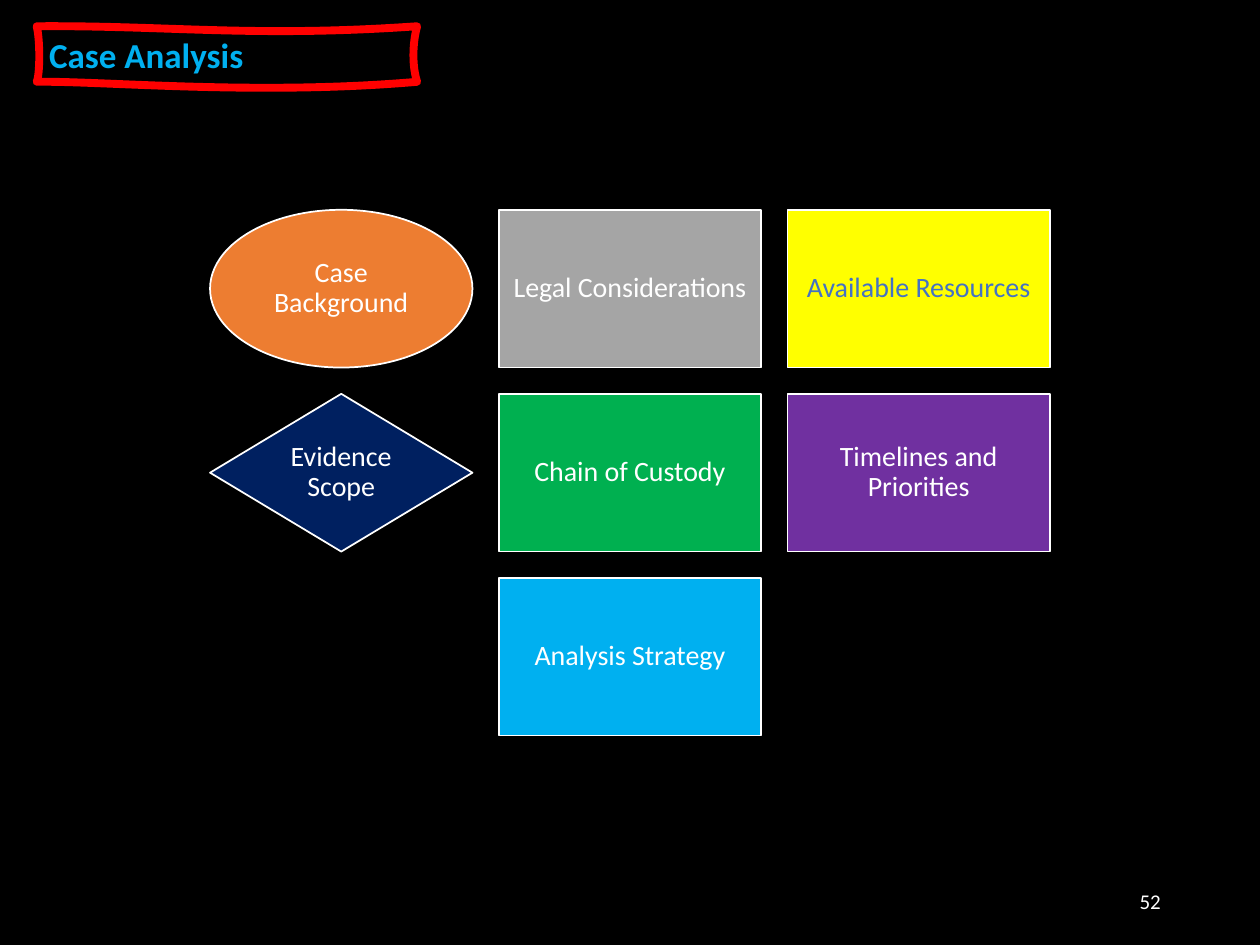
from lxml import etree
from pptx import Presentation
from pptx.dml.color import RGBColor
from pptx.enum.shapes import MSO_SHAPE
from pptx.enum.text import MSO_ANCHOR, PP_ALIGN
from pptx.oxml.ns import qn
from pptx.util import Cm, Pt

RECT, OVAL, DIAMOND = MSO_SHAPE.RECTANGLE, MSO_SHAPE.OVAL, MSO_SHAPE.DIAMOND
LEFT, CENTER, RIGHT = PP_ALIGN.LEFT, PP_ALIGN.CENTER, PP_ALIGN.RIGHT
MIDDLE = MSO_ANCHOR.MIDDLE

SLIDE_W, SLIDE_H = 25.4, 19.05
CELL_W, CELL_H, GAP, GRID_TOP = 5.29, 3.18, 0.53, 4.23
WHITE = "FFFFFF"

TOPIC_ROWS = [
    [("Case Background", OVAL, "ED7D31", WHITE),
     ("Legal Considerations", RECT, "A5A5A5", WHITE),
     ("Available Resources", RECT, "FFFF00", "4472C4")],
    [("Evidence Scope", DIAMOND, "002060", WHITE),
     ("Chain of Custody", RECT, "00B050", WHITE),
     ("Timelines and Priorities", RECT, "7030A0", WHITE)],
    [("Analysis Strategy", RECT, "00B0F0", WHITE)],
]

# Each curve: two control points and an end point, in cm
FRAME_START = (0.74, 0.53)
FRAME_CURVES = [
    [(3.4, 0.51), (5.11, 0.76), (8.41, 0.53)],
    [(8.31, 0.89), (8.31, 1.35), (8.41, 1.65)],
    [(5.16, 1.93), (2.08, 1.63), (0.74, 1.65)],
    [(0.81, 1.5), (0.81, 0.79), FRAME_START],
]


def rgb(value):
    return RGBColor.from_string(value)


class SlideBuilder:
    font = "Calibri"

    def __init__(self, slide):
        self.s = slide

    def background(self, color):
        fill = self.s.background.fill
        fill.solid()
        fill.fore_color.rgb = rgb(color)

    def add_text(self, sp, text, size, color, align, bold=False, spacing=None):
        tf = sp.text_frame
        tf.word_wrap = True
        tf.vertical_anchor = MIDDLE
        p = tf.paragraphs[0]
        p.alignment = align
        p.line_spacing = spacing
        r = p.add_run()
        r.text = text
        r.font.name = self.font
        r.font.size = Pt(size)
        r.font.bold = bold
        r.font.color.rgb = rgb(color)
        return tf

    def outline(self, sp, color, width):
        sp.shadow.inherit = False
        sp.line.color.rgb = rgb(color)
        sp.line.width = Pt(width)

    def topic(self, kind, x, y, text, fill, color):
        sp = self.s.shapes.add_shape(kind, Cm(x), Cm(y), Cm(CELL_W), Cm(CELL_H))
        sp.fill.solid()
        sp.fill.fore_color.rgb = rgb(fill)
        self.outline(sp, WHITE, 1)
        tf = self.add_text(sp, text, 16, color, CENTER, spacing=0.9)
        tf.margin_left = tf.margin_right = Cm(0.17)
        tf.margin_top = tf.margin_bottom = Cm(0.17)

    def curved_frame(self, start, curves, color, width):
        """Build a closed outline whose sides are cubic curves."""
        builder = self.s.shapes.build_freeform(Cm(start[0]), Cm(start[1]))
        builder.add_line_segments([(Cm(x), Cm(y)) for *_, (x, y) in curves], close=True)
        sp = builder.convert_to_shape()
        sides = list(sp._element.iter(qn("a:lnTo")))
        for side, points in zip(sides, curves):
            curve = etree.Element(qn("a:cubicBezTo"))
            for x, y in points:
                etree.SubElement(curve, qn("a:pt"),
                                 x=str(Cm(x) - sp.left), y=str(Cm(y) - sp.top))
            side.getparent().replace(side, curve)
        sp.fill.background()
        self.outline(sp, color, width)
        etree.SubElement(sp._element.spPr.find(qn("a:ln")), qn("a:round"))
        return sp

    def label(self, x, y, w, h, text, size, color, align):
        sp = self.s.shapes.add_textbox(Cm(x), Cm(y), Cm(w), Cm(h))
        self.add_text(sp, text, size, color, align)


def main():
    prs = Presentation()
    prs.slide_width, prs.slide_height = Cm(SLIDE_W), Cm(SLIDE_H)
    b = SlideBuilder(prs.slides.add_slide(prs.slide_layouts[6]))
    b.background("000000")

    title = b.curved_frame(FRAME_START, FRAME_CURVES, "FF0000", 4.5)
    b.add_text(title, "Case Analysis", 20, "00B0F0", LEFT, bold=True)

    for row, topics in enumerate(TOPIC_ROWS):
        # The short last row is centred under the full ones
        offset = 0 if len(topics) == 3 else 1
        grid_w = 3 * CELL_W + 2 * GAP
        y = GRID_TOP + row * (CELL_H + GAP)
        for col, (text, kind, fill, color) in enumerate(topics, start=offset):
            x = (SLIDE_W - grid_w) / 2 + col * (CELL_W + GAP)
            b.topic(kind, x, y, text, fill, color)

    b.label(17.93, 17.65, 5.72, 1.02, "52", 12, WHITE, RIGHT)
    prs.save("out.pptx")


if __name__ == "__main__":
    main()
